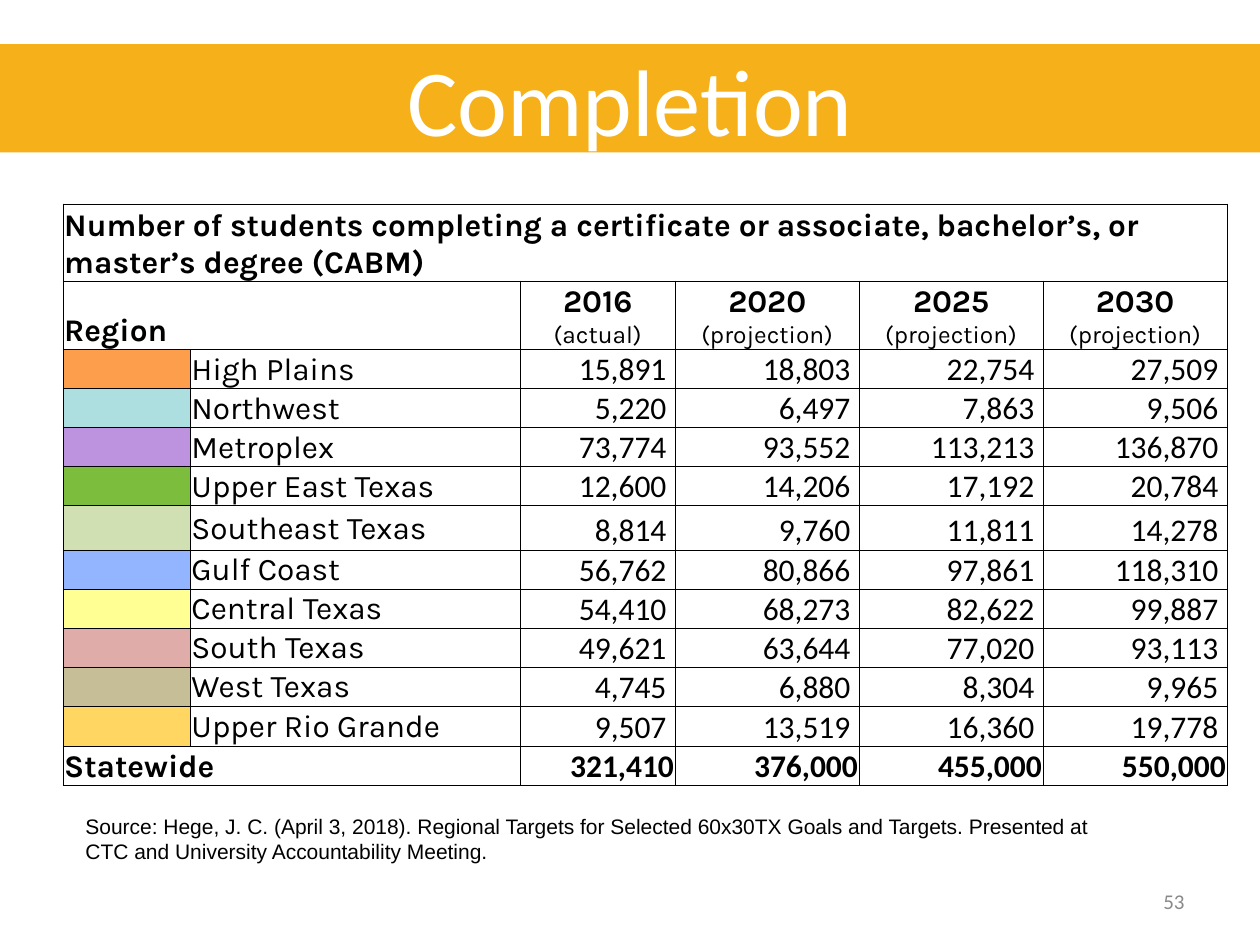
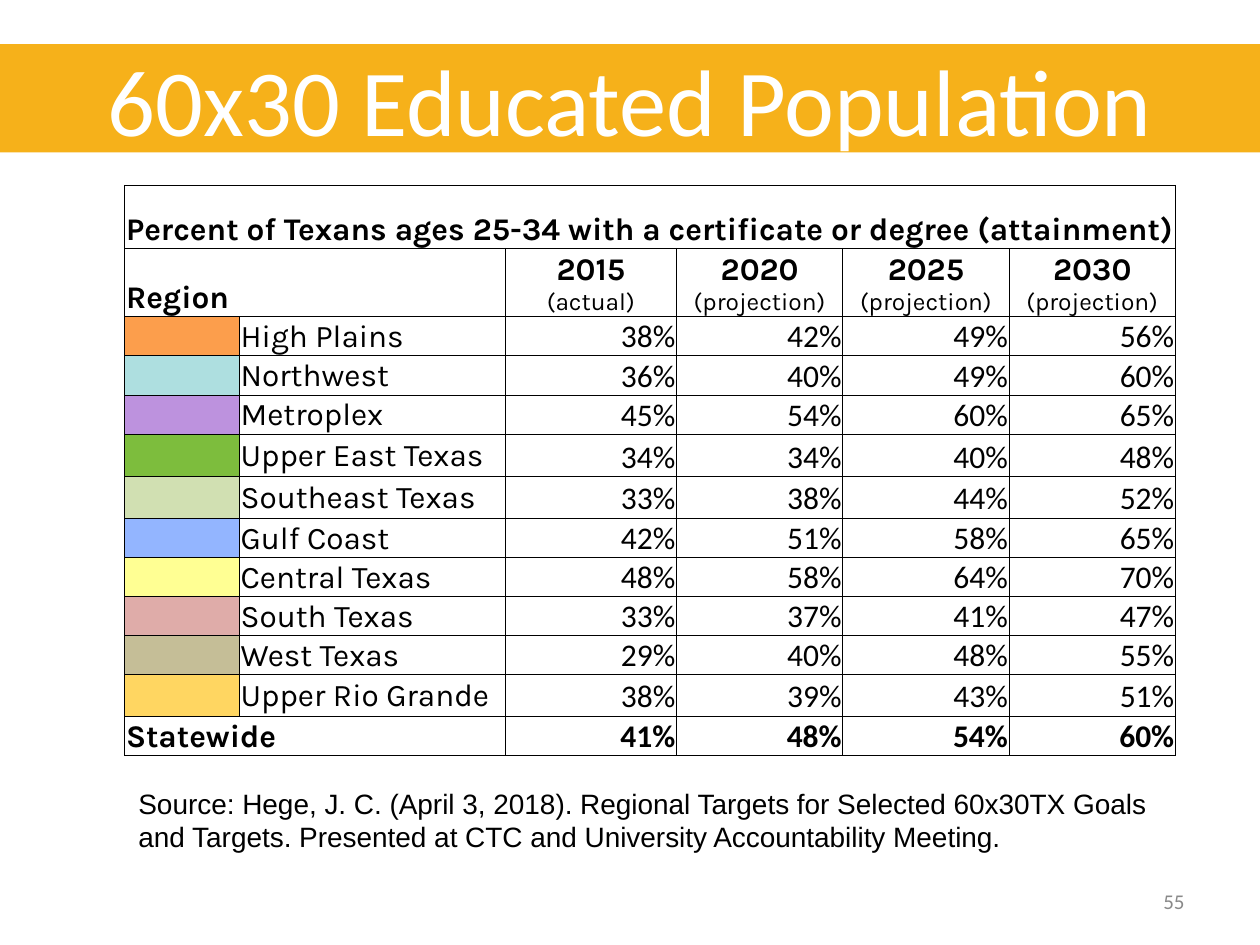
from lxml import etree
from pptx import Presentation
from pptx.dml.color import RGBColor
from pptx.enum.text import MSO_ANCHOR, MSO_AUTO_SIZE, PP_ALIGN
from pptx.oxml.ns import qn
from pptx.util import Inches, Pt

LEFT, CENTER, RIGHT = PP_ALIGN.LEFT, PP_ALIGN.CENTER, PP_ALIGN.RIGHT
TOP, MIDDLE, BOTTOM = MSO_ANCHOR.TOP, MSO_ANCHOR.MIDDLE, MSO_ANCHOR.BOTTOM
NO_FIT = MSO_AUTO_SIZE.NONE

GOLD = RGBColor(0xF6, 0xB1, 0x1A)
WHITE = RGBColor(0xFF, 0xFF, 0xFF)
BLACK = RGBColor(0x00, 0x00, 0x00)
GRAY = RGBColor(0x89, 0x89, 0x89)

REGIONS = [
    ("High Plains", RGBColor(0xFC, 0x9E, 0x4C)),
    ("Northwest", RGBColor(0xAE, 0xDF, 0xE0)),
    ("Metroplex", RGBColor(0xBD, 0x92, 0xDE)),
    ("Upper East Texas", RGBColor(0x7D, 0xBD, 0x3D)),
    ("Southeast Texas", RGBColor(0xD1, 0xE0, 0xB2)),
    ("Gulf Coast", RGBColor(0x93, 0xB5, 0xFF)),
    ("Central Texas", RGBColor(0xFF, 0xFF, 0x93)),
    ("South Texas", RGBColor(0xDF, 0xAC, 0xA9)),
    ("West Texas", RGBColor(0xC5, 0xBE, 0x97)),
    ("Upper Rio Grande", RGBColor(0xFF, 0xD6, 0x61)),
]
SOURCE = (
    "Source: Hege, J. C. (April 3, 2018). Regional Targets for Selected 60x30TX "
    "Goals and Targets. Presented at CTC and University Accountability Meeting."
)

COMPLETION = [
    ["15,891", "18,803", "22,754", "27,509"],
    ["5,220", "6,497", "7,863", "9,506"],
    ["73,774", "93,552", "113,213", "136,870"],
    ["12,600", "14,206", "17,192", "20,784"],
    ["8,814", "9,760", "11,811", "14,278"],
    ["56,762", "80,866", "97,861", "118,310"],
    ["54,410", "68,273", "82,622", "99,887"],
    ["49,621", "63,644", "77,020", "93,113"],
    ["4,745", "6,880", "8,304", "9,965"],
    ["9,507", "13,519", "16,360", "19,778"],
    ["321,410", "376,000", "455,000", "550,000"],
]
ATTAINMENT = [
    ["38%", "42%", "49%", "56%"],
    ["36%", "40%", "49%", "60%"],
    ["45%", "54%", "60%", "65%"],
    ["34%", "34%", "40%", "48%"],
    ["33%", "38%", "44%", "52%"],
    ["42%", "51%", "58%", "65%"],
    ["48%", "58%", "64%", "70%"],
    ["33%", "37%", "41%", "47%"],
    ["29%", "40%", "48%", "55%"],
    ["38%", "39%", "43%", "51%"],
    ["41%", "48%", "54%", "60%"],
]


class Deck:
    COLUMNS, ROWS = 100, 75
    HEAD, BODY, NOTE = "Calibri", "Karla", "Arial"

    def __init__(self):
        self.prs = Presentation()
        self.prs.slide_width, self.prs.slide_height = Inches(10), Inches(7.5)
        self.s = None

    def x(self, columns):
        return round(self.prs.slide_width * columns / self.COLUMNS)

    def y(self, rows):
        return round(self.prs.slide_height * rows / self.ROWS)

    def box(self, left, top, width, height):
        return self.x(left), self.y(top), self.x(width), self.y(height)

    def font(self, p, name, size, color=BLACK, bold=False, align=LEFT):
        p.alignment = align
        f = p.font
        f.name, f.size, f.bold = name, Pt(size), bold
        f.color.rgb = color

    def slide(self, title, number):
        self.s = self.prs.slides.add_slide(self.prs.slide_layouts[5])
        sp = self.s.shapes.title
        sp.left, sp.top, sp.width, sp.height = self.box(0, 3.5, 100, 8.6)
        sp.fill.solid()
        sp.fill.fore_color.rgb = GOLD
        tf = sp.text_frame
        tf.text = title
        tf.auto_size, tf.vertical_anchor = NO_FIT, MIDDLE
        self.font(tf.paragraphs[0], self.HEAD, 54, WHITE, align=CENTER)
        self.text(number, (71.7, 69.5, 23.3, 4), self.HEAD, 12, GRAY, RIGHT, MIDDLE)

    def text(self, text, place, name, size, color=BLACK, align=LEFT, anchor=TOP):
        tf = self.s.shapes.add_textbox(*self.box(*place)).text_frame
        tf.word_wrap, tf.vertical_anchor = True, anchor
        tf.text = text
        self.font(tf.paragraphs[0], name, size, color, align=align)

    def border(self, cell):
        tcPr = cell._tc.get_or_add_tcPr()
        for side in ("a:lnL", "a:lnR", "a:lnT", "a:lnB"):
            ln = etree.SubElement(tcPr, qn(side), w=str(Pt(0.5)))
            fill = etree.SubElement(ln, qn("a:solidFill"))
            etree.SubElement(fill, qn("a:srgbClr"), val=str(BLACK))

    def cell(self, cell, text, name=BODY, bold=False, align=LEFT, anchor=BOTTOM):
        cell.text = text
        cell.vertical_anchor = anchor
        for p in cell.text_frame.paragraphs:
            self.font(p, name, 18, bold=bold, align=align)

    def region_table(self, place, widths, heights, heading, first_year, values, pad):
        frame = self.s.shapes.add_table(len(heights), len(widths), *self.box(*place))
        table = frame.table
        table.first_row = table.horz_banding = False
        for column, width in zip(table.columns, widths):
            column.width = self.x(width)
        for row, height in zip(table.rows, heights):
            row.height = self.y(height)
        frame.height = self.y(place[3])
        for cell in table.iter_cells():
            cell.margin_left = cell.margin_right = cell.margin_top = Inches(0.01)
            cell.margin_bottom = 0
            self.border(cell)
            cell.fill.background()
            self.font(cell.text_frame.paragraphs[0], self.BODY, 18)

        last = len(heights) - 1
        table.cell(0, 0).merge(table.cell(0, len(widths) - 1))
        self.cell(table.cell(0, 0), heading, bold=True)
        for row, label in ((1, "Region"), (last, "Statewide")):
            table.cell(row, 0).merge(table.cell(row, 1))
            self.cell(table.cell(row, 0), label, bold=True)
        for col, year in enumerate((first_year, 2020, 2025, 2030), 2):
            kind = "actual" if col == 2 else "projection"
            cell = table.cell(1, col)
            self.cell(cell, f"{year}\n({kind})", bold=True, align=CENTER)
            self.font(cell.text_frame.paragraphs[1], self.BODY, 14, align=CENTER)
        for row, (region, color) in enumerate(REGIONS, 2):
            swatch = table.cell(row, 0)
            swatch.fill.solid()
            swatch.fill.fore_color.rgb = color
            self.cell(table.cell(row, 1), region, anchor=MIDDLE)
        for row, numbers in enumerate(values, 2):
            for col, number in enumerate(numbers, 2):
                cell = table.cell(row, col)
                self.cell(cell, number, self.HEAD, row == last, RIGHT)
                if row < last:
                    cell.margin_right = Inches(pad)


def main():
    deck = Deck()

    deck.slide("Completion", "53")
    deck.region_table(
        (5, 16.2, 92.4, 45.9),
        [10.1, 26.2, 12.3] + [14.6] * 3,
        [5, 3.1] + [2.7] * 3 + [3.1, 3.5] + [2.7] * 4 + [3.2, 2.7],
        "Number of students completing a certificate or associate, "
        "bachelor’s, or master’s degree (CABM)",
        2016, COMPLETION, 0.07,
    )
    deck.text(SOURCE, (5.8, 64.1, 85, 5), deck.NOTE, 12)

    deck.slide("60x30 Educated Population", "55")
    deck.region_table(
        (9.9, 14.7, 83.5, 46.1),
        [9.1, 21.1, 13.6] + [13.2] * 3,
        [5, 3.8] + [2.7] * 3 + [3.4, 3.3] + [2.7] * 4 + [3.3, 2.7],
        "Percent of Texans ages 25-34 with a certificate or degree (attainment)",
        2015, ATTAINMENT, 0.01,
    )
    deck.text(SOURCE, (10, 61.9, 82.5, 6.4), deck.NOTE, 16)

    deck.prs.save("out.pptx")


if __name__ == "__main__":
    main()
